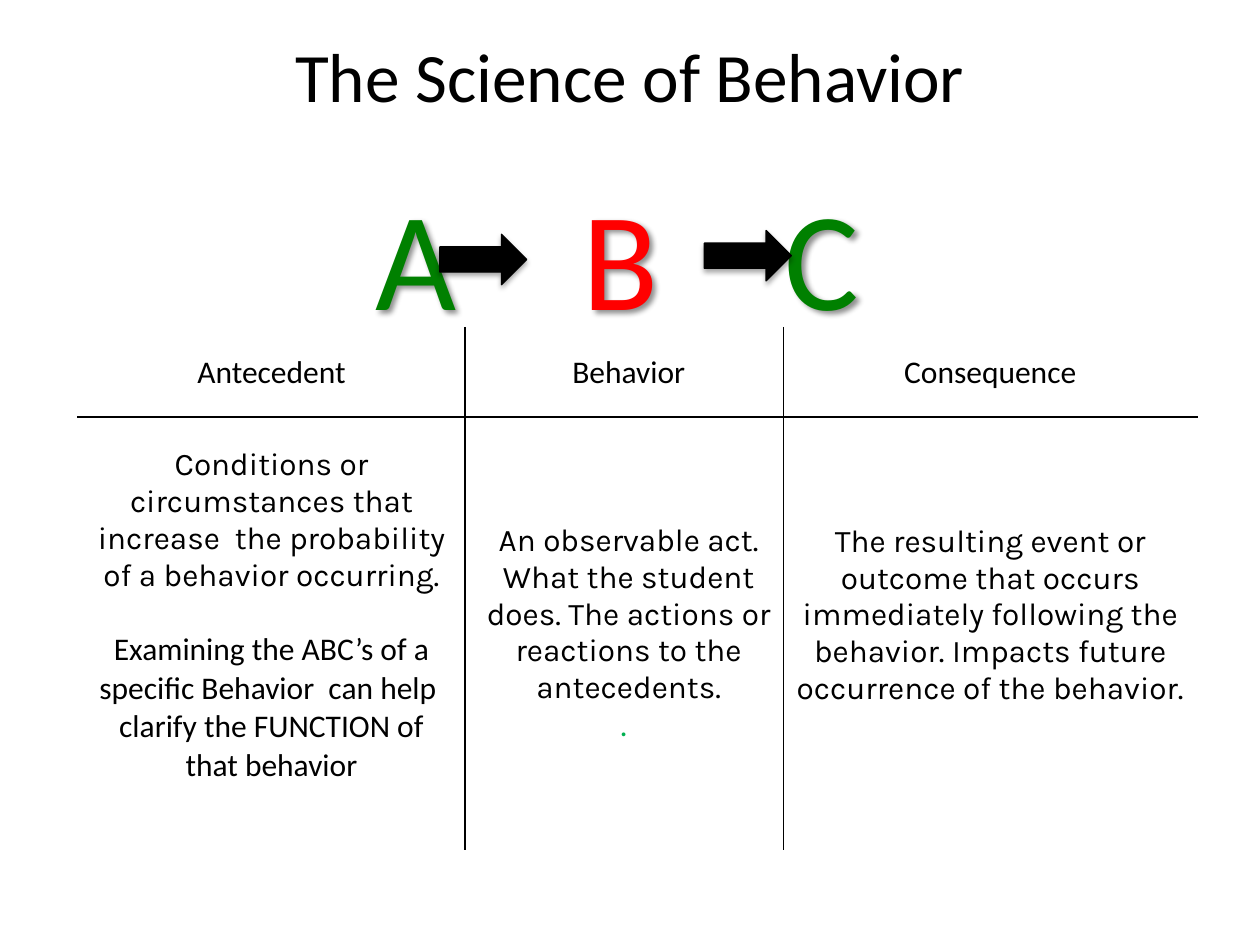
from lxml import etree
from pptx import Presentation
from pptx.dml.color import RGBColor
from pptx.enum import shapes, text
from pptx.oxml import ns
from pptx.util import Inches, Pt

BLACK = RGBColor(0x00, 0x00, 0x00)
WHITE = RGBColor(0xFF, 0xFF, 0xFF)
GREEN = RGBColor(0x00, 0x80, 0x00)
RED = RGBColor(0xFF, 0x00, 0x00)
LIGHT_GREEN = RGBColor(0x00, 0xB0, 0x50)
HEADING_FONT = "Calibri"
TEXT_FONT = "Karla"


def add_element(parent, tag, **attributes):
    return etree.SubElement(parent, ns.qn(tag), attributes)


class SlideBuilder:
    def __init__(self, slide):
        self.slide = slide

    def place(self, shape, left, top, width, height):
        shape.left, shape.top = Inches(left), Inches(top)
        shape.width, shape.height = Inches(width), Inches(height)

    def shadow(self, shape, blur, distance, direction, opacity):
        shape.shadow.inherit = False
        effects = shape._element.spPr.find(ns.qn("a:effectLst"))
        shadow = add_element(effects, "a:outerShdw", blurRad=str(Pt(blur)),
                             dist=str(Pt(distance)), dir=str(direction * 60000),
                             algn="tl", rotWithShape="0")
        color = add_element(shadow, "a:srgbClr", val=str(BLACK))
        add_element(color, "a:alpha", val=str(opacity * 1000))

    def run(self, paragraph, words, size=18, font=HEADING_FONT, color=BLACK, italic=None):
        run = paragraph.add_run()
        run.text = words
        run.font.size = Pt(size)
        run.font.name = font
        run.font.color.rgb = color
        run.font.italic = italic
        return run

    def title(self, words, box):
        shape = self.slide.shapes.title
        self.place(shape, *box)
        frame = shape.text_frame
        frame.auto_size = text.MSO_AUTO_SIZE.NONE
        frame.vertical_anchor = text.MSO_ANCHOR.MIDDLE
        paragraph = frame.paragraphs[0]
        paragraph.alignment = text.PP_ALIGN.CENTER
        self.run(paragraph, words, 39.6)
        paragraph.add_line_break()
        paragraph.font.size = Pt(39.6)

    def letters(self, letters, box, gap):
        shape = self.slide.placeholders[1]
        self.place(shape, *box)
        self.shadow(shape, 3, 3, 45, 43)
        frame = shape.text_frame
        frame.auto_size = text.MSO_AUTO_SIZE.NONE
        paragraph = frame.paragraphs[0]
        properties = paragraph._p.get_or_add_pPr()
        properties.set("marL", "0")
        properties.set("indent", "0")
        add_element(properties, "a:buNone")
        paragraph.alignment = text.PP_ALIGN.CENTER
        paragraph.space_before = Pt(0)
        for index, (letter, color) in enumerate(letters):
            if index:
                space = self.run(paragraph, " ", 80)
                space.font._element.set("spc", str(gap * 100))
            self.run(paragraph, letter, 80, color=color)

    def borders(self, cell, row, column, last_row, last_column):
        inner = {
            "a:lnL": column > 0,
            "a:lnR": column < last_column,
            "a:lnT": row > 0,
            "a:lnB": row < last_row,
        }
        properties = cell._tc.get_or_add_tcPr()
        for tag, visible in inner.items():
            line = add_element(properties, tag, w=str(Pt(1)))
            fill = add_element(line, "a:solidFill")
            add_element(fill, "a:srgbClr", val=str(BLACK if visible else WHITE))

    def table(self, rows, box, widths, heights, raised_cells):
        frame = self.slide.shapes.add_table(len(rows), len(widths), *map(Inches, box))
        table = frame.table
        table.first_row = table.horz_banding = False
        for column, width in zip(table.columns, widths):
            column.width = Inches(width)
        for row, height in zip(table.rows, heights):
            row.height = Inches(height)
        for row, contents in enumerate(rows):
            for column, paragraphs in enumerate(contents):
                cell = table.cell(row, column)
                self.borders(cell, row, column, len(rows) - 1, len(widths) - 1)
                cell.fill.background()
                cell.vertical_anchor = text.MSO_ANCHOR.MIDDLE
                if (row, column) in raised_cells:
                    cell.margin_bottom = Inches(0.34)
                self.cell_text(cell.text_frame, paragraphs)

    def cell_text(self, frame, paragraphs):
        for index, (words, style, indent, gap) in enumerate(paragraphs):
            paragraph = frame.add_paragraph() if index else frame.paragraphs[0]
            paragraph.alignment = text.PP_ALIGN.CENTER
            paragraph.space_before = Pt(gap)
            if indent:
                paragraph._p.get_or_add_pPr().set("marL", str(Inches(indent)))
            self.run(paragraph, words, **style)

    def arrow(self, left, top):
        shape = self.slide.shapes.add_shape(
            shapes.MSO_SHAPE.RIGHT_ARROW, Inches(left), Inches(top), Inches(0.69), Inches(0.4))
        shape.fill.solid()
        shape.fill.fore_color.rgb = BLACK
        shape.line.color.rgb = BLACK
        shape.line.width = Pt(0.75)
        self.shadow(shape, 3.1, 1.8, 90, 35)


def main():
    presentation = Presentation()
    presentation.slide_width = Inches(10)
    presentation.slide_height = Inches(7.5)
    slide = presentation.slides.add_slide(presentation.slide_layouts[1])
    builder = SlideBuilder(slide)

    builder.title("The Science of Behavior", (0.5, 0.3, 9, 1.25))
    builder.letters([("A", GREEN), ("B", RED), ("C", GREEN)], (0.4, 1.3, 9, 3.62), 54)

    heading = {"font": HEADING_FONT}
    body = {"font": TEXT_FONT}
    accent = {"color": LIGHT_GREEN, "italic": True}
    rows = [
        [
            [("Antecedent", heading, 0, 0)],
            [("Behavior", heading, 0.07, 0)],
            [("Consequence", heading, 0, 0)],
        ],
        [
            [("Conditions or circumstances that increase  the probability of a "
              "behavior occurring.", body, 0, 0),
             ("Examining the ABC’s of a specific Behavior  can help  clarify the "
              "FUNCTION of that behavior", heading, 0, 21)],
            [("An observable act. What the student does. The actions or reactions "
              "to the antecedents.", body, 0.07, 0),
             (".", accent, 0, 0)],
            [("The resulting event or outcome that occurs immediately following the "
              "behavior. Impacts future occurrence of the behavior.", body, 0, 0)],
        ],
    ]
    builder.table(rows, (0.62, 2.6, 8.88, 4.15), (3.07, 2.53, 3.28), (0.71, 3.44),
                  {(1, 0), (1, 2)})

    builder.arrow(5.59, 1.83)
    builder.arrow(3.49, 1.86)
    presentation.save("out.pptx")


if __name__ == "__main__":
    main()
